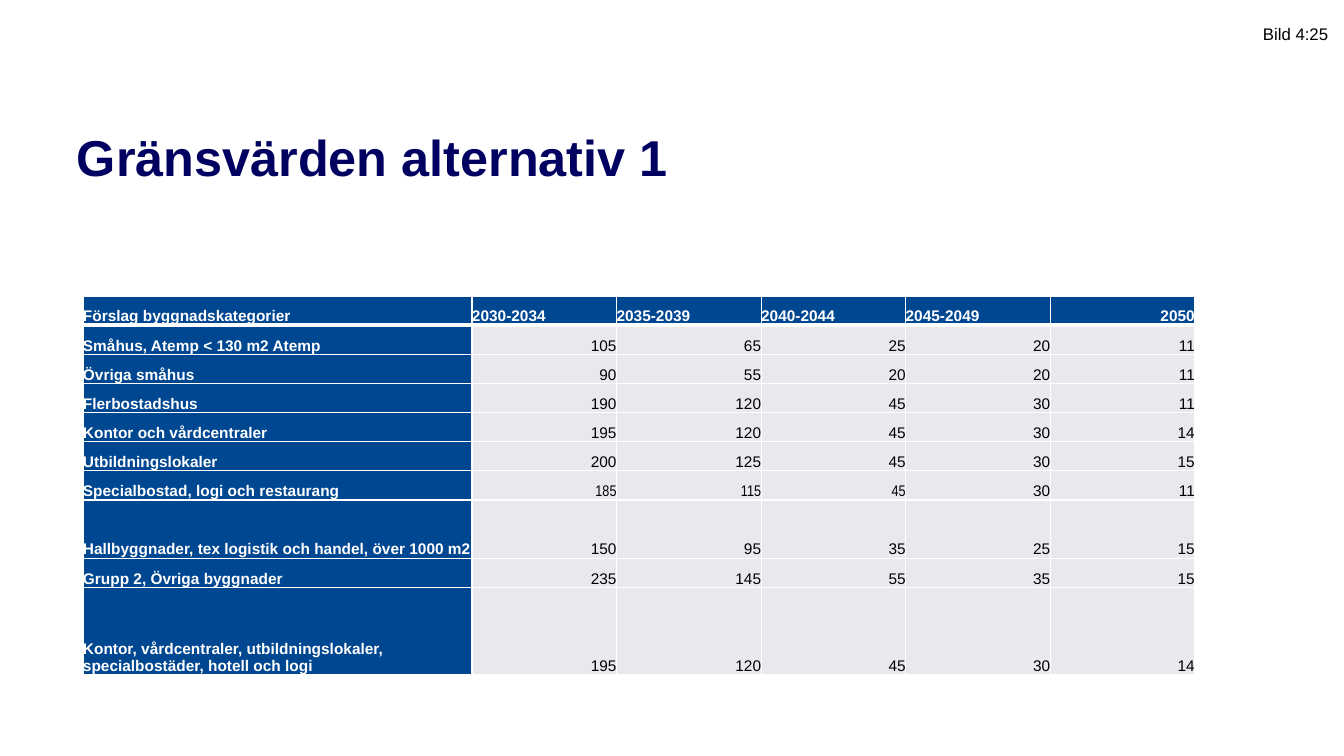
from lxml import etree
from pptx import Presentation
from pptx.dml.color import RGBColor
from pptx.enum.text import MSO_ANCHOR as Anchor, PP_ALIGN as Align
from pptx.oxml.ns import qn
from pptx.util import Pt

# Content
TITLE = "Gränsvärden alternativ 1"
PAGE = "Bild 4:25"
HEADER = ["Förslag byggnadskategorier", "2030-2034", "2035-2039",
          "2040-2044", "2045-2049", "2050"]
LIMITS = [
    ("Småhus, Atemp < 130 m2 Atemp", 105, 65, 25, 20, 11),
    ("Övriga småhus", 90, 55, 20, 20, 11),
    ("Flerbostadshus", 190, 120, 45, 30, 11),
    ("Kontor och vårdcentraler", 195, 120, 45, 30, 14),
    ("Utbildningslokaler", 200, 125, 45, 30, 15),
    ("Specialbostad, logi och restaurang", 185, 115, 45, 30, 11),
    ("Hallbyggnader, tex logistik och handel, över 1000 m2", 150, 95, 35, 25, 15),
    ("Grupp 2, Övriga byggnader", 235, 145, 55, 35, 15),
    ("Kontor, vårdcentraler, utbildningslokaler, specialbostäder, hotell och logi",
     195, 120, 45, 30, 14),
]
ROW_LINES = [1, 1, 1, 1, 1, 1, 1, 2, 1, 3]
NARROW_ROW, NARROW_COLS = 6, (1, 2, 3)
NAVY, BLUE, GREY, WHITE, BLACK = "000061", "004791", "E7E9EE", "FFFFFF", "000000"

# Layout in px
SLIDE_W, SLIDE_H = 1344, 756
TITLE_BOX = (67, 121, 1212, 62)
TABLE_BOX = (83, 296, 1112, 379)
PAGE_BOX = (1253, 19, 87, 30)
LABEL_W = 389


def px(n):
    return round(n * 914400 / 100.8)


def rgb(color):
    return RGBColor.from_string(color)


def style(p, size, color, bold=False, name="Arial"):
    for r in p.runs:
        r.font.size, r.font.bold, r.font.name = Pt(size), bold, name
        r.font.color.rgb = rgb(color)


def set_borders(cell, widths):
    tc_pr = cell._tc.get_or_add_tcPr()
    for i, (side, width) in enumerate(widths.items()):
        ln = etree.Element(qn(f"a:ln{side}"), w=str(Pt(width)))
        fill = etree.SubElement(ln, qn("a:solidFill"))
        etree.SubElement(fill, qn("a:srgbClr"), val=WHITE)
        tc_pr.insert(i, ln)


prs = Presentation()
prs.slide_width, prs.slide_height = px(SLIDE_W), px(SLIDE_H)
s = prs.slides.add_slide(prs.slide_layouts[5])

# Title
sp = s.shapes.title
sp.left, sp.top, sp.width, sp.height = map(px, TITLE_BOX)
tf = sp.text_frame
tf.text = TITLE
tf.word_wrap = True
tf.vertical_anchor = Anchor.TOP
tf.margin_left = tf.margin_right = px(10)
tf.margin_top, tf.margin_bottom = px(12), px(5)
p = tf.paragraphs[0]
p.alignment, p.line_spacing = Align.LEFT, 0.9
style(p, 36, NAVY, bold=True)

# Table of limit values
rows = [HEADER, *LIMITS]
table = s.shapes.add_table(len(rows), len(HEADER), *map(px, TABLE_BOX)).table
value_w = (TABLE_BOX[2] - LABEL_W) / (len(HEADER) - 1)
for c, column in enumerate(table.columns):
    column.width = px(value_w if c else LABEL_W)
for row, lines in zip(table.rows, ROW_LINES):
    row.height = px(TABLE_BOX[3] * lines / sum(ROW_LINES))

for r, values in enumerate(rows):
    for c, value in enumerate(values):
        cell = table.cell(r, c)
        heading = r == 0 or c == 0
        cell.text = str(value)
        cell.vertical_anchor = Anchor.BOTTOM
        cell.margin_left = cell.margin_right = 0
        cell.margin_top = cell.margin_bottom = 0
        cell.fill.solid()
        cell.fill.fore_color.rgb = rgb(BLUE if heading else GREY)
        set_borders(cell, {"L": 1, "R": 1, "T": 3 if r == 1 else 1,
                           "B": 3 if r == 0 else 1})
        p = cell.text_frame.paragraphs[0]
        right = not heading or value == "2050"
        p.alignment = Align.RIGHT if right else Align.LEFT
        narrow = r == NARROW_ROW and c in NARROW_COLS
        style(p, 11, WHITE if heading else BLACK, heading,
              "Arial Narrow" if narrow else "Arial")

# Page label
tf = s.shapes.add_textbox(*map(px, PAGE_BOX)).text_frame
tf.text = PAGE
tf.word_wrap = False
style(tf.paragraphs[0], 12, BLACK)

prs.save("out.pptx")
